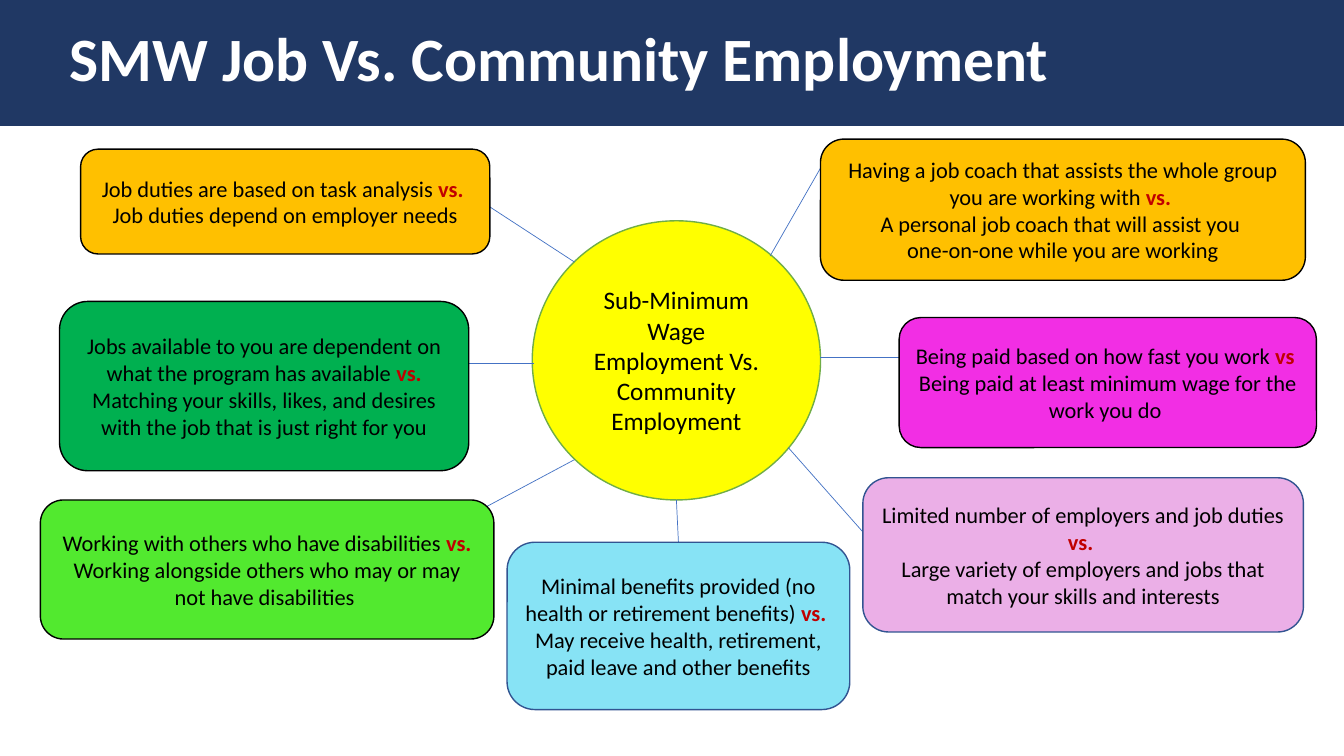
from typing import NamedTuple

from lxml import etree
from pptx import Presentation
from pptx.dml.color import RGBColor
from pptx.enum.shapes import MSO_CONNECTOR, MSO_SHAPE
from pptx.enum.text import MSO_ANCHOR, PP_ALIGN
from pptx.oxml.ns import qn
from pptx.util import Inches, Pt

RECTANGLE, ROUNDED, OVAL = MSO_SHAPE.RECTANGLE, MSO_SHAPE.ROUNDED_RECTANGLE, MSO_SHAPE.OVAL
STRAIGHT = MSO_CONNECTOR.STRAIGHT
MIDDLE = MSO_ANCHOR.MIDDLE
LEFT, CENTER = PP_ALIGN.LEFT, PP_ALIGN.CENTER

WHITE = RGBColor(0xFF, 0xFF, 0xFF)
BLACK = RGBColor(0x00, 0x00, 0x00)
NAVY = RGBColor(0x20, 0x38, 0x64)
YELLOW = RGBColor(0xFF, 0xFF, 0x00)
LEAF = RGBColor(0x70, 0xAD, 0x47)
BLUE = RGBColor(0x44, 0x72, 0xC4)
DEEP_BLUE = RGBColor(0x32, 0x54, 0x91)
RED = RGBColor(0xC0, 0x00, 0x00)
AMBER = RGBColor(0xFF, 0xC0, 0x00)
GREEN = RGBColor(0x00, 0xB0, 0x50)
LIME = RGBColor(0x52, 0xE9, 0x2F)
MAGENTA = RGBColor(0xF2, 0x2E, 0xE4)
CYAN = RGBColor(0x87, 0xE3, 0xF5)
LILAC = RGBColor(0xEB, 0xAF, 0xE7)

FONT = "Calibri"
SLIDE_WIDTH, SLIDE_HEIGHT = Inches(13.33), Inches(7.5)
BAND_BOX = (0, 0, 100, 16.67)
TITLE_BOX = (4.43, 0, 88.73, 16.4)
HUB_BOX = (39.6, 29.2, 21.45, 36.93)


class Comparison(NamedTuple):
    """A card, its spoke from the hub, and paragraphs whose text between bars is stressed."""
    box: tuple
    spoke: tuple
    fill: RGBColor
    outline: RGBColor
    paragraphs: tuple


COMPARISONS = [
    Comparison((66.9, 42, 31.05, 17.2), (61.05, 47.33, 67.43, 47.33), MAGENTA, BLACK,
               ("Being paid based on how fast you work |vs |",
                "Being paid at least minimum wage for the work you do ")),
    Comparison((6, 19.73, 30.45, 13.87), (42.75, 34.67, 35.03, 25.73), AMBER, BLACK,
               ("Job duties are based on task analysis |vs. |",
                "Job duties depend on employer needs")),
    Comparison((4.43, 39.87, 30.45, 22.4), (39.75, 48.13, 33.83, 48.13), GREEN, BLACK,
               ("Jobs available to you are dependent on what the program has available |vs. |"
                "Matching your skills, likes, and desires with the job that is just right for you",)),
    Comparison((3, 66.13, 33.75, 18.4), (42.75, 60.8, 35.03, 68.13), LIME, BLACK,
               (" Working with others who have disabilities |vs. |",
                "Working alongside others who may or may not have disabilities ")),
    Comparison((37.73, 71.73, 25.5, 22.13), (50.33, 66.13, 50.48, 71.73), CYAN, DEEP_BLUE,
               ("Minimal benefits provided (no health or retirement benefits) |vs. |",
                "May receive health, retirement, paid leave and other benefits")),
    Comparison((64.2, 63.2, 32.78, 20.4), (58.65, 59.2, 64.88, 71.73), LILAC, DEEP_BLUE,
               ("Limited number of employers and job duties", "|vs. |",
                "Large variety of employers and jobs that match your skills and interests")),
    Comparison((61.05, 18.4, 36.08, 18.67), (57.3, 33.87, 61.73, 20.13), AMBER, BLACK,
               ("Having a job coach that assists the whole group you are working with |vs. |",
                "A personal job coach that will assist you ",
                "one-on-one while you are working")),
]


def to_lengths(shares):
    """Turn alternating x and y percentages of the slide into lengths."""
    sides = (SLIDE_WIDTH, SLIDE_HEIGHT) * 2
    return [round(side * share / 100) for side, share in zip(sides, shares)]


def write_text(frame, paragraphs, size=16, color=BLACK, bold=False, align=CENTER, spacing=None):
    """Write paragraphs, with the parts between bars in bold red."""
    frame.word_wrap = True
    frame.vertical_anchor = MIDDLE
    for index, words in enumerate(paragraphs):
        paragraph = frame.add_paragraph() if index else frame.paragraphs[0]
        paragraph.alignment = align
        if spacing:
            paragraph.line_spacing = spacing
        for position, part in enumerate(words.split("|")):
            if part:
                stressed = position % 2 == 1
                run = paragraph.add_run()
                run.text = part
                run.font.name = FONT
                run.font.size = Pt(size)
                run.font.bold = bold or stressed
                run.font.color.rgb = RED if stressed else color


def add_panel(slide, kind, box, fill, outline=None):
    """Add a flat filled shape, outlined if a colour is given."""
    panel = slide.shapes.add_shape(kind, *to_lengths(box))
    panel.shadow.inherit = False
    panel.fill.solid()
    panel.fill.fore_color.rgb = fill
    if outline is None:
        panel.line.fill.background()
    else:
        panel.line.color.rgb = outline
        panel.line.width = Pt(1)
    return panel


def add_header(slide, band_box, title_box):
    """Place the title on its navy band."""
    title = slide.shapes.title
    band = add_panel(slide, RECTANGLE, band_box, NAVY)
    title.element.addprevious(band.element)
    title.left, title.top, title.width, title.height = to_lengths(title_box)
    write_text(title.text_frame, ["SMW Job Vs. Community Employment"],
               size=44, color=WHITE, bold=True, align=LEFT, spacing=0.9)


def add_hub(slide, box):
    """Add the central circle."""
    hub = add_panel(slide, OVAL, box, YELLOW, LEAF)
    write_text(hub.text_frame,
               ["Sub-Minimum Wage Employment Vs. Community Employment"], size=18)


def add_spoke(slide, ends):
    """Draw a thin line from the hub towards a card."""
    spoke = slide.shapes.add_connector(STRAIGHT, *to_lengths(ends))
    spoke.line.color.rgb = BLUE
    spoke.line.width = Pt(0.5)
    etree.SubElement(spoke.element.spPr, qn("a:effectLst"))


def add_card(slide, comparison):
    """Add one rounded card with its comparison."""
    card = add_panel(slide, ROUNDED, comparison.box, comparison.fill, comparison.outline)
    write_text(card.text_frame, comparison.paragraphs)


def main():
    """Build and save the slide."""
    deck = Presentation()
    deck.slide_width, deck.slide_height = SLIDE_WIDTH, SLIDE_HEIGHT
    slide = deck.slides.add_slide(deck.slide_layouts[5])
    add_header(slide, BAND_BOX, TITLE_BOX)
    add_hub(slide, HUB_BOX)
    for comparison in COMPARISONS:
        add_spoke(slide, comparison.spoke)
    for comparison in COMPARISONS:
        add_card(slide, comparison)
    deck.save("out.pptx")


if __name__ == "__main__":
    main()
